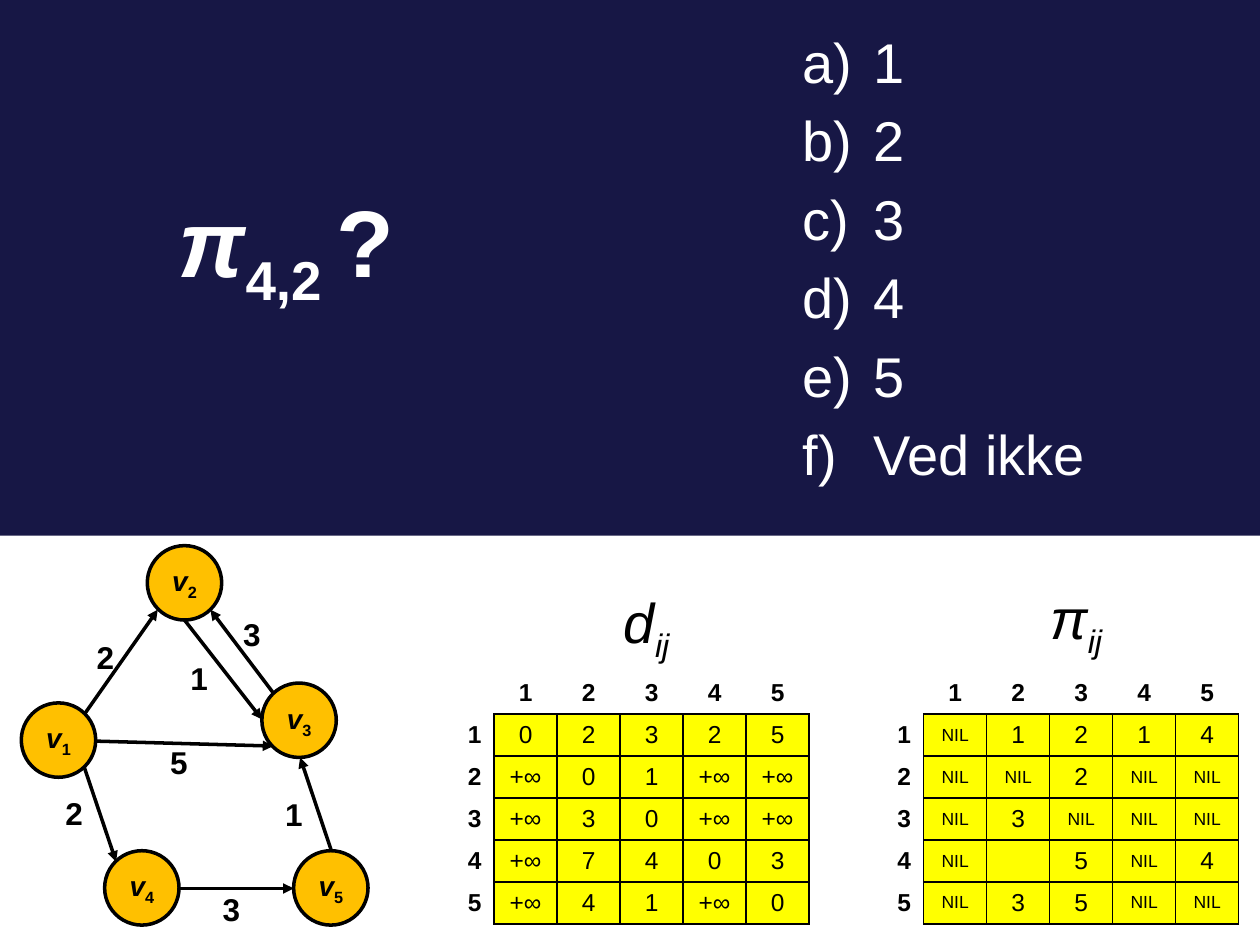
"""Build a quiz slide about shortest paths with a graph and two matrices."""
from lxml import etree
from pptx import Presentation
from pptx.dml.color import RGBColor
from pptx.enum.shapes import MSO_CONNECTOR, MSO_SHAPE
from pptx.enum.text import MSO_ANCHOR, PP_ALIGN
from pptx.oxml.ns import qn
from pptx.util import Cm, Pt

LEFT, CENTER, RIGHT = PP_ALIGN.LEFT, PP_ALIGN.CENTER, PP_ALIGN.RIGHT
MIDDLE = MSO_ANCHOR.MIDDLE
RECTANGLE, OVAL = MSO_SHAPE.RECTANGLE, MSO_SHAPE.OVAL
STRAIGHT = MSO_CONNECTOR.STRAIGHT

NAVY = RGBColor(0x17, 0x17, 0x45)
WHITE = RGBColor(0xFF, 0xFF, 0xFF)
BLACK = RGBColor(0, 0, 0)
AMBER = RGBColor(0xFF, 0xC0, 0)
YELLOW = RGBColor(0xFF, 0xFF, 0)


def write(paragraph, pieces, size, color=BLACK, bold=False, alignment=CENTER):
    paragraph.alignment = alignment
    for text, italic, subscript in pieces:
        run = paragraph.add_run()
        run.text = text
        style = {"name": "Arial", "size": Pt(size), "bold": bold, "italic": italic}
        for name, value in style.items():
            setattr(run.font, name, value)
        run.font.color.rgb = color
        if subscript:
            run.font._element.set("baseline", "-25000")


def add_text_box(slide, left, top, width, height):
    frame = slide.shapes.add_textbox(Cm(left), Cm(top), Cm(width), Cm(height)).text_frame
    frame.word_wrap = True
    return frame


presentation = Presentation()
presentation.slide_width, presentation.slide_height = Cm(25.4), Cm(19.05)
slide = presentation.slides.add_slide(presentation.slide_layouts[5])
slide.background.fill.solid()
slide.background.fill.fore_color.rgb = NAVY

title = slide.shapes.title
title_box = {"left": 1.7, "top": 3.18, "width": 7.62, "height": 3.61}
for name, value in title_box.items():
    setattr(title, name, Cm(value))
title.text_frame.vertical_anchor = MIDDLE
question = [(" π", True, False), ("4,2 ", False, True), ("?", False, False)]
write(title.text_frame.paragraphs[0], question, 54, WHITE, True)

answers = add_text_box(slide, 15.93, 0.43, 6.93, 10.36)
for index, answer in enumerate(["1", "2", "3", "4", "5", "Ved ikke"]):
    paragraph = answers.add_paragraph() if index else answers.paragraphs[0]
    write(paragraph, [(answer, False, False)], 32, WHITE, alignment=LEFT)
    properties = paragraph._p.get_or_add_pPr()
    properties.set("marL", str(Cm(1.42)))
    properties.set("indent", str(-Cm(1.42)))
    spacing = etree.SubElement(properties, qn("a:spcBef"))
    etree.SubElement(spacing, qn("a:spcPct"), val="20000")
    etree.SubElement(properties, qn("a:buFont"), typeface="+mj-lt")
    etree.SubElement(properties, qn("a:buAutoNum"), type="alphaLcParenR")

panel = slide.shapes.add_shape(RECTANGLE, 0, Cm(10.8), Cm(25.4), Cm(8.25))
panel.shadow.inherit = False
panel.fill.solid()
panel.fill.fore_color.rgb = WHITE
panel.line.fill.background()

nodes = {"1": (0.43, 14.17), "2": (2.97, 11), "3": (5.28, 13.77),
         "4": (2.11, 17.15), "5": (5.92, 17.15)}
for number, (left, top) in nodes.items():
    node = slide.shapes.add_shape(OVAL, Cm(left), Cm(top), Cm(1.5), Cm(1.5))
    node.shadow.inherit = False
    node.fill.solid()
    node.fill.fore_color.rgb = AMBER
    node.line.color.rgb = BLACK
    node.line.width = Pt(2)
    frame_format = {"word_wrap": False, "vertical_anchor": MIDDLE,
                    "margin_left": 0, "margin_right": 0}
    for name, value in frame_format.items():
        setattr(node.text_frame, name, value)
    label = [("v", True, False), (number, False, True)]
    write(node.text_frame.paragraphs[0], label, 16, bold=True)

edges = [
    (5.51, 13.97, 4.24, 12.29),
    (1.7, 14.4, 3.18, 12.29),
    (1.7, 15.47, 2.34, 17.37),
    (3.72, 12.5, 5.28, 14.5),
    (3.61, 17.91, 5.92, 17.91),
    (1.93, 14.94, 5.51, 15.04),
    (6.68, 17.15, 6.05, 15.27),
]
for ends in edges:
    edge = slide.shapes.add_connector(STRAIGHT, *map(Cm, ends))
    edge.line.color.rgb = BLACK
    edge.line.width = Pt(2)
    etree.SubElement(edge.line._get_or_add_ln(), qn("a:tailEnd"), type="triangle")
    etree.SubElement(edge._element.spPr, qn("a:effectLst"))

weights = [
    ("2", 1.07, 15.88, 0.84, LEFT),
    ("2", 1.7, 12.73, 0.84, LEFT),
    ("5", 3.18, 14.86, 0.84, LEFT),
    ("3", 4.24, 17.81, 0.84, LEFT),
    ("1", 4.65, 15.9, 1.7, RIGHT),
    ("3", 4.65, 12.27, 0.84, LEFT),
    ("1", 2.97, 13.16, 1.47, RIGHT),
]
for weight, left, top, width, alignment in weights:
    frame = add_text_box(slide, left, top, width, 1.02)
    write(frame.paragraphs[0], [(weight, False, False)], 18, bold=True, alignment=alignment)

distances = [
    ["0", "2", "3", "2", "5"],
    ["+∞", "0", "1", "+∞", "+∞"],
    ["+∞", "3", "0", "+∞", "+∞"],
    ["+∞", "7", "4", "0", "3"],
    ["+∞", "4", "1", "+∞", "0"],
]
predecessors = [
    ["NIL", "1", "2", "1", "4"],
    ["NIL", "NIL", "2", "NIL", "NIL"],
    ["NIL", "3", "NIL", "NIL", "NIL"],
    ["NIL", "", "5", "NIL", "4"],
    ["NIL", "3", "5", "NIL", "NIL"],
]
matrices = [("d", distances, 8.69, 11.23, 11.71), ("π", predecessors, 17.35, 19.89, 11.63)]
for symbol, values, left, caption_left, caption_top in matrices:
    table = slide.shapes.add_table(6, 6, Cm(left), Cm(13.55), Cm(7.62), Cm(5.08)).table
    table.first_row = table.horz_banding = False
    grid = [["", "1", "2", "3", "4", "5"]]
    grid += [[str(number), *row] for number, row in enumerate(values, 1)]
    for row, texts in enumerate(grid):
        for column, text in enumerate(texts):
            cell = table.cell(row, column)
            is_value = row > 0 and column > 0
            borders = {"a:lnL": is_value, "a:lnR": row > 0,
                       "a:lnT": is_value, "a:lnB": column > 0}
            for tag, is_black in borders.items():
                border = etree.SubElement(cell._tc.get_or_add_tcPr(), qn(tag), w=str(Pt(1)))
                fill = etree.SubElement(border, qn("a:solidFill"))
                color = BLACK if is_black else WHITE
                etree.SubElement(fill, qn("a:srgbClr"), val=str(color))
            cell.fill.solid()
            cell.fill.fore_color.rgb = YELLOW if is_value else WHITE
            cell.margin_top = cell.margin_bottom = 0
            cell.vertical_anchor = MIDDLE
            if text:
                write(cell.text_frame.paragraphs[0], [(text, False, False)],
                      10 if text == "NIL" else 14, bold=not is_value,
                      alignment=CENTER if column else RIGHT)
    caption = add_text_box(slide, caption_left, caption_top, 3.61, 1.63)
    write(caption.paragraphs[0], [(symbol, True, False), ("ij", True, True)], 32)

presentation.save("out.pptx")
